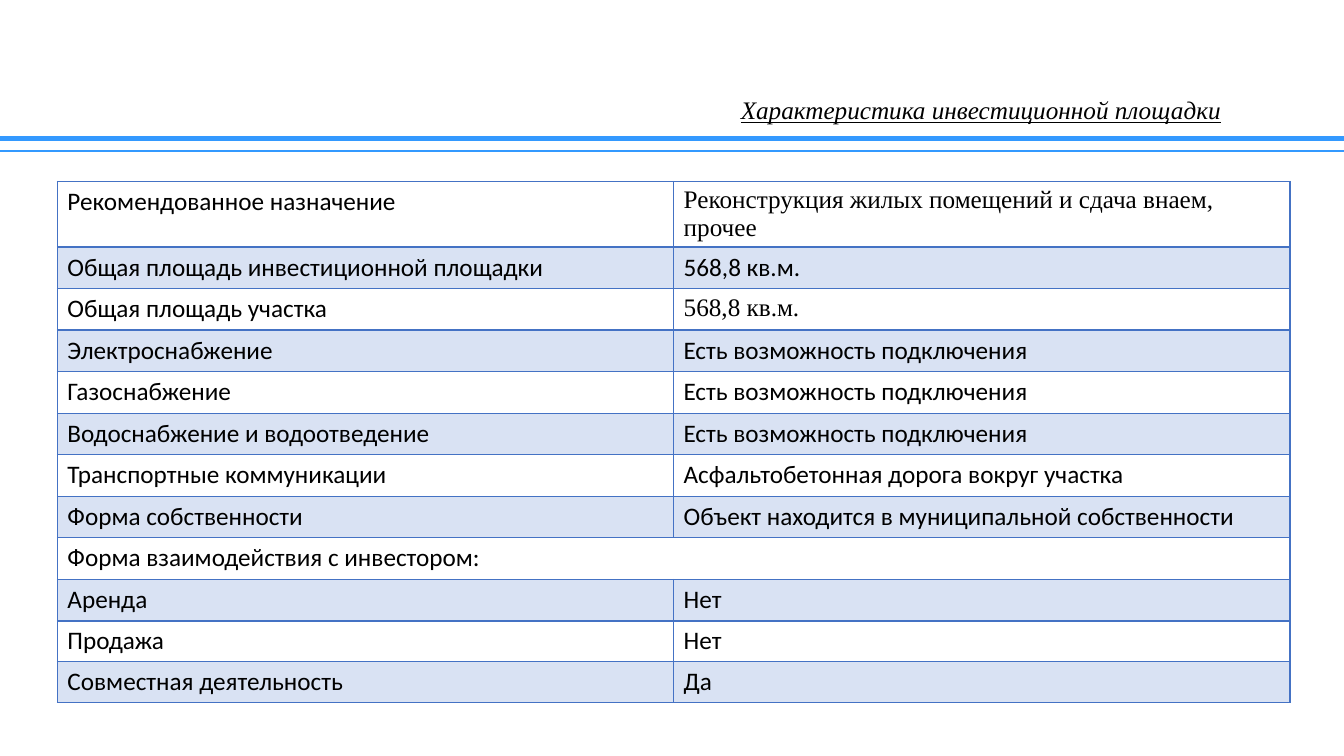
from lxml import etree
from pptx import Presentation
from pptx.dml.color import RGBColor
from pptx.enum.shapes import MSO_CONNECTOR
from pptx.enum.text import MSO_ANCHOR, MSO_AUTO_SIZE, PP_ALIGN
from pptx.oxml.ns import qn
from pptx.util import Pt

STRAIGHT = MSO_CONNECTOR.STRAIGHT
MIDDLE = MSO_ANCHOR.MIDDLE
NO_AUTOFIT = MSO_AUTO_SIZE.NONE
CENTER = PP_ALIGN.CENTER

SLIDE_WIDTH, SLIDE_HEIGHT = 960, 540
SANS, SERIF = "Calibri", "Times New Roman"
BLACK, RULE_BLUE, TABLE_BLUE = "000000", "3399FF", "4472C4"
BAND_ALPHA = 20000
TABLE_LEFT, TABLE_TOP = 41, 129.6
COLUMN_WIDTH = 440.2
FIRST_HEIGHT, ROW_HEIGHT, LAST_HEIGHT = 46.8, 29.7, 29.2
CONNECTION = "Есть возможность подключения"

CHARACTERISTICS = [
    ("Рекомендованное назначение",
     "Реконструкция жилых помещений и сдача внаем, прочее"),
    ("Общая площадь инвестиционной площадки", "568,8 кв.м."),
    ("Общая площадь участка", "568,8 кв.м."),
    ("Электроснабжение", CONNECTION),
    ("Газоснабжение", CONNECTION),
    ("Водоснабжение и водоотведение", CONNECTION),
    ("Транспортные коммуникации", "Асфальтобетонная дорога вокруг участка"),
    ("Форма собственности", "Объект находится в муниципальной собственности"),
    ("Форма взаимодействия с инвестором:", None),
    ("Аренда", "Нет"),
    ("Продажа", "Нет"),
    ("Совместная деятельность", "Да"),
]
SERIF_VALUE_ROWS = (0, 2)


def color(value):
    return RGBColor.from_string(value)


def add_run(paragraph, text, font_name):
    run = paragraph.add_run()
    run.text = text
    run.font.name = font_name
    run.font.size = Pt(18)
    run.font.color.rgb = color(BLACK)
    return run


def add_rule(slide, top, weight):
    rule = slide.shapes.add_connector(
        STRAIGHT, Pt(0), Pt(top), Pt(SLIDE_WIDTH), Pt(top))
    rule.line.color.rgb = color(RULE_BLUE)
    rule.line.width = Pt(weight)
    etree.SubElement(rule._element.spPr, qn("a:effectLst"))


def set_title(slide, text):
    title = slide.shapes.title
    title.left, title.top = Pt(480), Pt(69.8)
    title.width, title.height = Pt(441.4), Pt(19.4)
    frame = title.text_frame
    frame.word_wrap = True
    frame.auto_size = NO_AUTOFIT
    frame.vertical_anchor = MIDDLE
    paragraph = frame.paragraphs[0]
    paragraph.alignment = CENTER
    paragraph.line_spacing = 0.9
    run = add_run(paragraph, text, SERIF)
    run.font.italic = True
    run.font.underline = True


def set_borders(cell, top_weight, bottom_weight):
    properties = cell._tc.get_or_add_tcPr()
    weights = {"lnL": 1, "lnR": 1, "lnT": top_weight, "lnB": bottom_weight}
    for side, weight in weights.items():
        border = etree.SubElement(properties, qn(f"a:{side}"), w=str(Pt(weight)))
        fill = etree.SubElement(border, qn("a:solidFill"))
        etree.SubElement(fill, qn("a:srgbClr"), val=TABLE_BLUE)


def set_band(cell, banded):
    if not banded:
        cell.fill.background()
        return
    cell.fill.solid()
    cell.fill.fore_color.rgb = color(TABLE_BLUE)
    band_color = cell._tc.tcPr.find(f"{qn('a:solidFill')}/{qn('a:srgbClr')}")
    etree.SubElement(band_color, qn("a:alpha"), val=str(BAND_ALPHA))


def add_characteristics(slide):
    count = len(CHARACTERISTICS)
    heights = [FIRST_HEIGHT] + [ROW_HEIGHT] * (count - 3) + [LAST_HEIGHT] * 2
    table = slide.shapes.add_table(
        count, 2, Pt(TABLE_LEFT), Pt(TABLE_TOP),
        Pt(2 * COLUMN_WIDTH), Pt(sum(heights))).table
    for column in table.columns:
        column.width = Pt(COLUMN_WIDTH)
    table.first_row = False
    table.horz_banding = False
    for index, (height, texts) in enumerate(zip(heights, CHARACTERISTICS)):
        table.rows[index].height = Pt(height)
        for side, text in enumerate(texts):
            cell = table.cell(index, side)
            set_borders(cell, 2 if index == 1 else 1, 2 if index == 0 else 1)
            set_band(cell, index % 2 == 1)
            if index == 0:
                cell.margin_bottom = Pt(1.8)
            if text is None:
                table.cell(index, 0).merge(cell)
                continue
            serif = side == 1 and index in SERIF_VALUE_ROWS
            add_run(cell.text_frame.paragraphs[0], text, SERIF if serif else SANS)


def main():
    presentation = Presentation()
    presentation.slide_width = Pt(SLIDE_WIDTH)
    presentation.slide_height = Pt(SLIDE_HEIGHT)
    slide = presentation.slides.add_slide(presentation.slide_layouts[5])
    add_rule(slide, 99.2, 3.5)
    add_rule(slide, 108, 1.5)
    set_title(slide, "Характеристика инвестиционной площадки")
    add_characteristics(slide)
    presentation.save("out.pptx")


if __name__ == "__main__":
    main()
